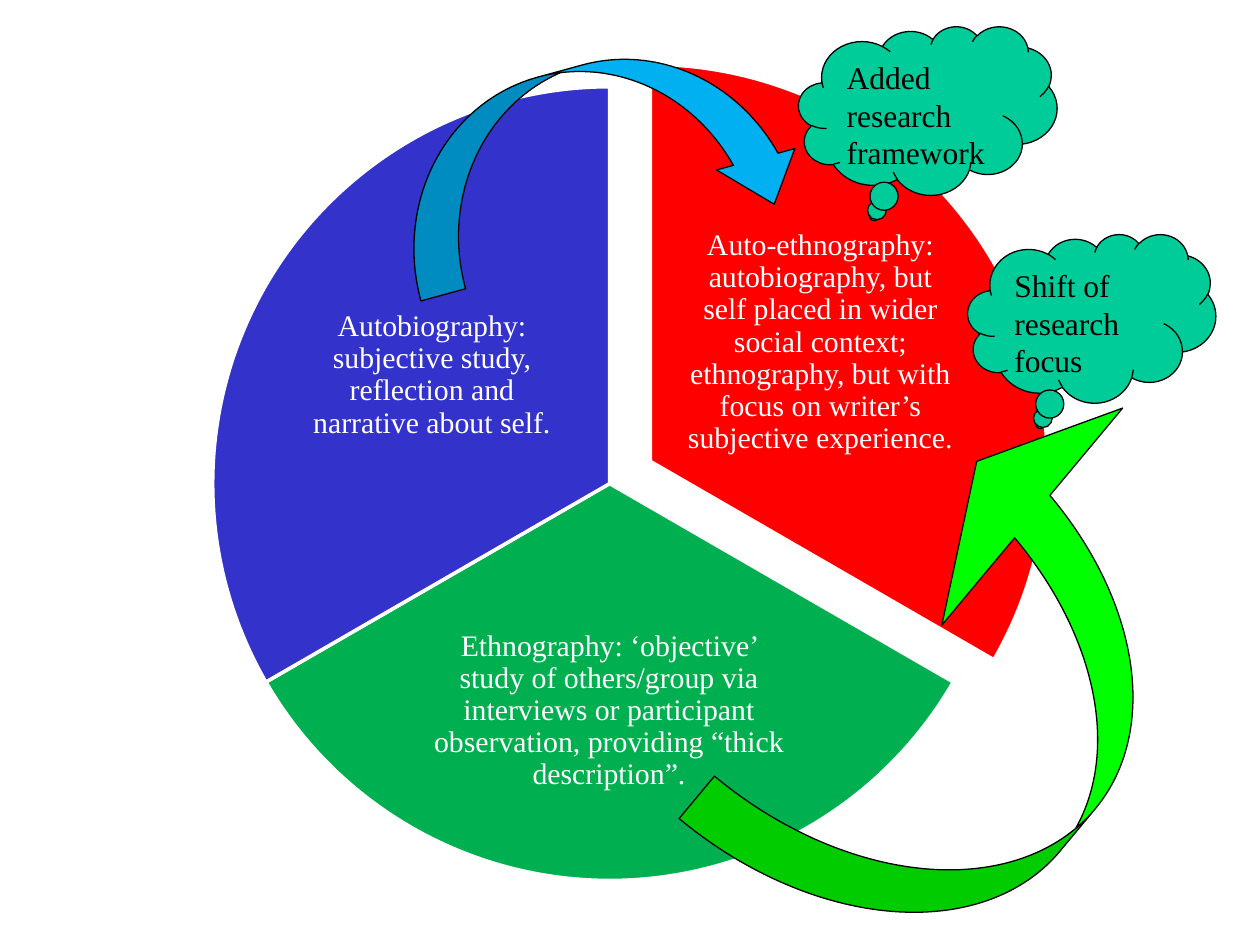
import pptx
import pptx.util
from pptx.dml.color import RGBColor
from pptx.enum.shapes import MSO_SHAPE
from pptx.enum.text import MSO_ANCHOR, PP_ALIGN

Cm = pptx.util.Cm
Pt = pptx.util.Pt

FONT = "Times New Roman"
WHITE = RGBColor(0xFF, 0xFF, 0xFF)
BLACK = RGBColor(0x00, 0x00, 0x00)
RED = RGBColor(0xFF, 0x00, 0x00)
GREEN = RGBColor(0x00, 0xB0, 0x50)
INDIGO = RGBColor(0x33, 0x33, 0xCC)
SKY = RGBColor(0x00, 0xB0, 0xF0)
LIME = RGBColor(0x00, 0xFF, 0x00)
TEAL = RGBColor(0x00, 0xCC, 0x99)

PIE_SIZE = 16
# Pie box origin, start and end angle, colour, label box within the pie, wording
SECTORS = [
    ((5.11, 1.3), 270, 30, RED, (8.71, 2.94, 5.44, 5.33),
     "Auto-ethnography: autobiography, but self placed in wider social context; "
     "ethnography, but with focus on writer’s subjective experience."),
    ((4.29, 1.75), 30, 150, GREEN, (4.37, 10.11, 7.24, 4.95),
     "Ethnography: ‘objective’ study of others/group via interviews or "
     "participant observation, providing “thick description”."),
    ((4.29, 1.75), 150, 270, INDIGO, (1.7, 3.15, 5.44, 5.33),
     "Autobiography: subjective study, reflection and narrative about self."),
]
ARROWS = [
    (MSO_SHAPE.CURVED_DOWN_ARROW, (7.85, 1.32, 8.2, 3.73), 344.7,
     (0.25, 0.439, 0.261), SKY),
    (MSO_SHAPE.CURVED_UP_ARROW, (13.92, 10.67, 12.22, 6.32), 309.8,
     (0.176, 0.901, 0.249), LIME),
]
CLOUDS = [
    ((16.1, 0.53, 5.21, 3.4), "Added research framework"),
    ((19.51, 4.72, 5, 3.4), "Shift of research focus"),
]


def add_outlined_shape(slide, kind, box, fill, line, line_width, adjustments=()):
    shape = slide.shapes.add_shape(kind, *map(Cm, box))
    shape.shadow.inherit = False
    shape.fill.solid()
    shape.fill.fore_color.rgb = fill
    shape.line.color.rgb = line
    shape.line.width = Pt(line_width)
    for index, value in enumerate(adjustments):
        shape.adjustments[index] = value
    return shape


def write_text(shape, text, size, color, alignment, anchor):
    frame = shape.text_frame
    frame.word_wrap = True
    frame.vertical_anchor = anchor
    paragraph = frame.paragraphs[0]
    paragraph.alignment = alignment
    run = paragraph.add_run()
    run.text = text
    run.font.name = FONT
    run.font.size = Pt(size)
    run.font.color.rgb = color
    return frame


def add_sector(slide, origin, start, end, color, label_box, text):
    """Pie angles are in degrees; python-pptx scales adjustments by 100000."""
    left, top = origin
    add_outlined_shape(slide, MSO_SHAPE.PIE, (left, top, PIE_SIZE, PIE_SIZE),
                       color, WHITE, 2, (start * 0.6, end * 0.6))
    x, y, width, height = label_box
    label = slide.shapes.add_textbox(Cm(left + x), Cm(top + y), Cm(width), Cm(height))
    frame = write_text(label, text, 17, WHITE, PP_ALIGN.CENTER, MSO_ANCHOR.MIDDLE)
    frame.margin_left = frame.margin_right = Cm(0.05)
    frame.margin_top = frame.margin_bottom = Cm(0.05)
    frame.paragraphs[0].line_spacing = 0.9


def add_curved_arrow(slide, kind, box, rotation, adjustments, color):
    arrow = add_outlined_shape(slide, kind, box, color, BLACK, 0.75, adjustments)
    arrow.rotation = rotation


def add_cloud(slide, box, text):
    cloud = add_outlined_shape(slide, MSO_SHAPE.CLOUD_CALLOUT, box, TEAL, BLACK, 0.75)
    write_text(cloud, text, 18, BLACK, PP_ALIGN.LEFT, MSO_ANCHOR.TOP)


def main():
    presentation = pptx.Presentation()
    presentation.slide_width = Cm(25.4)
    presentation.slide_height = Cm(19.05)
    slide = presentation.slides.add_slide(presentation.slide_layouts[6])
    for sector in SECTORS:
        add_sector(slide, *sector)
    for arrow in ARROWS:
        add_curved_arrow(slide, *arrow)
    for cloud in CLOUDS:
        add_cloud(slide, *cloud)
    presentation.save("out.pptx")


if __name__ == "__main__":
    main()
